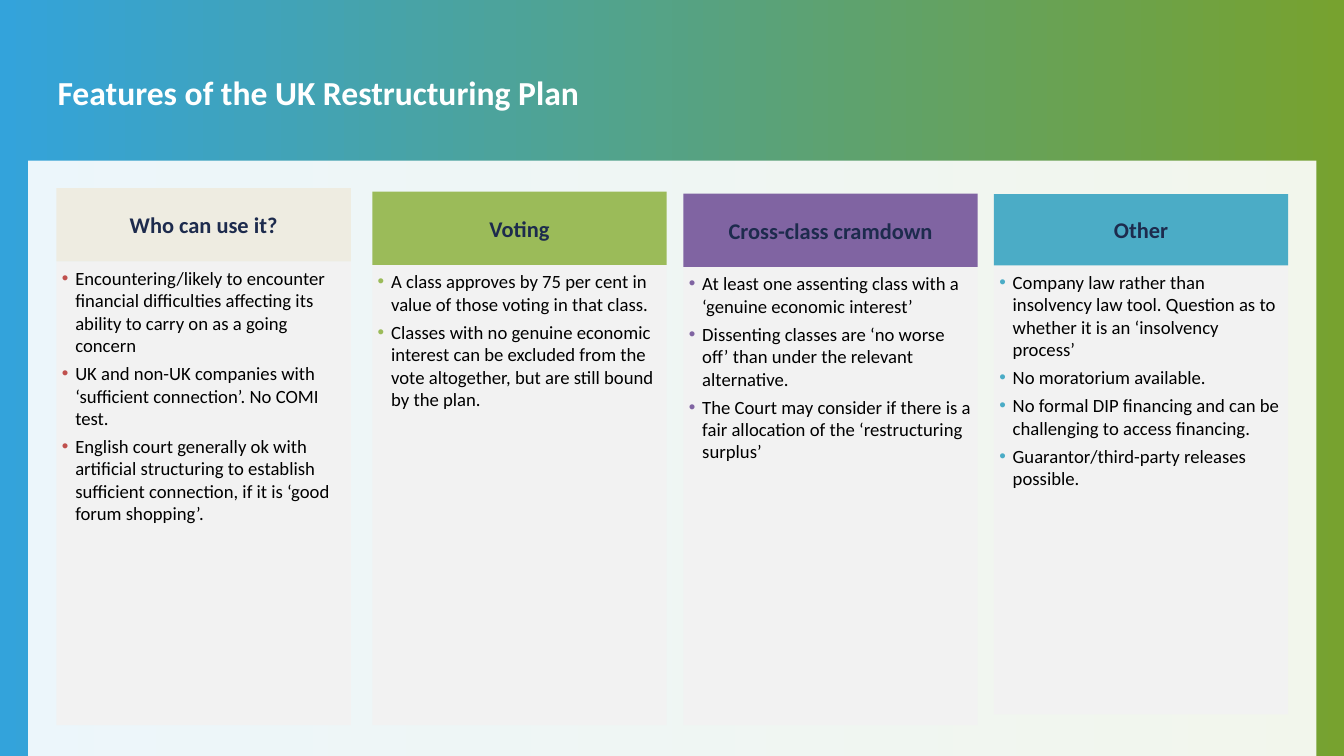
from lxml.etree import SubElement
from pptx import Presentation
from pptx.dml.color import RGBColor as RGB
from pptx.enum.shapes import MSO_SHAPE as Kind
from pptx.enum.text import MSO_ANCHOR as Anchor, PP_ALIGN as Align
from pptx.oxml.ns import qn
from pptx.util import Inches, Pt

BLUE = RGB(0x33, 0xA3, 0xDB)
LEAF = RGB(0x77, 0xA2, 0x2F)
WHITE = RGB(0xFF, 0xFF, 0xFF)
BLACK = RGB(0x00, 0x00, 0x00)
NAVY = RGB(0x1D, 0x2B, 0x4D)
GREY = RGB(0xF2, 0xF2, 0xF2)
CREAM = RGB(0xEE, 0xEC, 0xE1)
RED = RGB(0xC0, 0x50, 0x4D)
GREEN = RGB(0x9B, 0xBB, 0x59)
PLUM = RGB(0x80, 0x64, 0xA2)
TEAL = RGB(0x4B, 0xAC, 0xC6)

CARD_W = 4.38

# Left, top, split and bottom edges; head fill; bullet colour; head; points
CARDS = [
    (0.84, 2.8, 3.89, 10.79, CREAM, RED, "Who can use it?", [
        "Encountering/likely to encounter financial difficulties affecting "
        "its ability to carry on as a going concern",
        "UK and non-UK companies with ‘sufficient connection’. No COMI test.",
        "English court generally ok with artificial structuring to establish "
        "sufficient connection, if it is ‘good forum shopping’.",
    ]),
    (5.54, 2.85, 3.94, 10.79, GREEN, GREEN, "Voting", [
        "A class approves by 75 per cent in value of those voting in that "
        "class.",
        "Classes with no genuine economic interest can be excluded from the "
        "vote altogether, but are still bound by the plan.",
    ]),
    (10.17, 2.88, 3.97, 10.79, PLUM, PLUM, "Cross-class cramdown", [
        "At least one assenting class with a ‘genuine economic interest’",
        "Dissenting classes are ‘no worse off’ than under the relevant "
        "alternative.",
        "The Court may consider if there is a fair allocation of the "
        "‘restructuring surplus’",
    ]),
    (14.79, 2.89, 3.95, 10.63, TEAL, TEAL, "Other", [
        "Company law rather than insolvency law tool. Question as to whether "
        "it is an ‘insolvency process’",
        "No moratorium available.",
        "No formal DIP financing and can be challenging to access financing.",
        "Guarantor/third-party releases possible.",
    ]),
]


def write(shape, lines, size=20, color=BLACK, bold=False, font="Calibri",
          align=Align.LEFT, anchor=Anchor.TOP, inset=0, wrap=True,
          space=None, after=None, dot=None):
    """Fill a shape with paragraphs, bulleted if a dot colour is given."""
    frame = shape.text_frame
    frame.word_wrap = wrap
    frame.vertical_anchor = anchor
    frame.margin_left = frame.margin_right = Inches(inset)
    frame.margin_top = frame.margin_bottom = Inches(inset)
    for i, line in enumerate(lines):
        para = frame.add_paragraph() if i else frame.paragraphs[0]
        para.alignment = align
        if space is not None:
            para.line_spacing = Pt(space)
        if after is not None:
            para.space_after = Pt(after)
        if dot is not None:
            props = para._p.get_or_add_pPr()
            props.set("marL", str(Inches(0.2)))
            props.set("indent", str(-Inches(0.2)))
            tint = SubElement(props, qn("a:buClr"))
            SubElement(tint, qn("a:srgbClr"), val=str(dot))
            SubElement(props, qn("a:buFont"), typeface="Arial")
            SubElement(props, qn("a:buChar"), char="•")
        run = para.add_run()
        run.text = line
        run.font.name, run.font.size = font, Pt(size)
        run.font.bold, run.font.color.rgb = bold, color


class Deck:
    """Holds the style and the current slide."""

    def __init__(self, slide, font="Calibri"):
        self.slide = slide
        self.font = font

    def back(self, start, end):
        fill = self.slide.background.fill
        fill.gradient()
        fill.gradient_angle = 0
        for stop, color in zip(fill.gradient_stops, (start, end)):
            stop.color.rgb = color

    def box(self, x, y, w, h, color, alpha=None):
        shape = self.slide.shapes.add_shape(
            Kind.RECTANGLE, Inches(x), Inches(y), Inches(w), Inches(h))
        shape.shadow.inherit = False
        shape.fill.solid()
        shape.fill.fore_color.rgb = color
        shape.line.fill.background()
        if alpha is not None:
            tint = shape._element.spPr.find(".//" + qn("a:srgbClr"))
            SubElement(tint, qn("a:alpha"), val=str(alpha * 1000))
        return shape

    def title(self, x, y, w, h, text):
        label = self.slide.shapes.add_textbox(
            Inches(x), Inches(y), Inches(w), Inches(h))
        write(label, [text], size=36, color=WHITE, bold=True, font=self.font,
              align=Align.CENTER, wrap=False, space=35)

    def card(self, x, top, split, end, fill, dot, head, points):
        body = self.box(x, split, CARD_W, end - split, GREY)
        write(body, points, font=self.font, inset=0.08, after=6, dot=dot)
        bar = self.box(x, top, CARD_W, split - top, fill)
        write(bar, [head], size=24, color=NAVY, bold=True, font=self.font,
              align=Align.CENTER, anchor=Anchor.MIDDLE, inset=0.04)


def main():
    show = Presentation()
    show.slide_width, show.slide_height = Inches(20), Inches(11.25)
    deck = Deck(show.slides.add_slide(show.slide_layouts[6]))

    # Background and panel
    deck.back(BLUE, LEAF)
    deck.box(0.42, 2.39, 19.17, 8.86, WHITE, alpha=91)

    # Title
    deck.title(0.84, 1.18, 7.8, 0.49, "Features of the UK Restructuring Plan")

    # Four feature cards
    for card in CARDS:
        deck.card(*card)

    show.save("out.pptx")


if __name__ == "__main__":
    main()
